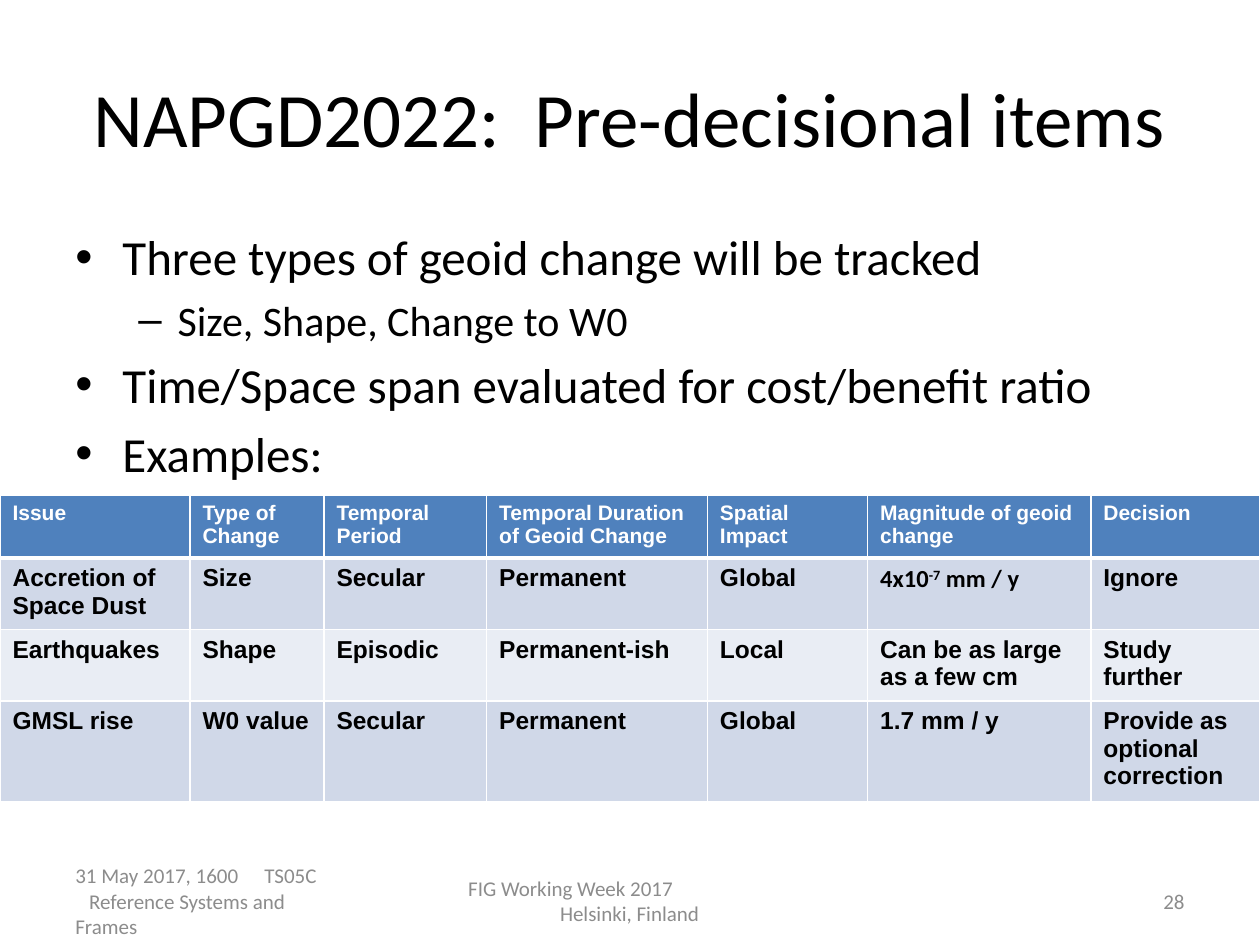
from dataclasses import dataclass
from typing import Optional

from lxml.etree import SubElement
from pptx import Presentation
from pptx.dml.color import RGBColor
from pptx.enum.text import MSO_ANCHOR, PP_ALIGN
from pptx.oxml.ns import qn
from pptx.util import Cm, Pt

BLACK = RGBColor(0x00, 0x00, 0x00)
WHITE = RGBColor(0xFF, 0xFF, 0xFF)
GREY = RGBColor(0x8C, 0x8C, 0x8C)
HEADER_BLUE = RGBColor(0x4F, 0x81, 0xBD)
BAND_DARK = RGBColor(0xD0, 0xD8, 0xE8)
BAND_LIGHT = RGBColor(0xE9, 0xED, 0xF4)


@dataclass(frozen=True)
class Span:
    text: str
    size: float
    color: RGBColor = BLACK
    font: str = "Calibri"
    bold: Optional[bool] = None
    baseline: int = 0


@dataclass(frozen=True)
class Line:
    span: Span
    align: PP_ALIGN = PP_ALIGN.LEFT
    level: int = 0
    margin: float = 0
    indent: float = 0
    bullet: str = ""
    tab: float = 0
    before: float = 0


@dataclass(frozen=True)
class TextBlock:
    left: float
    top: float
    width: float
    height: float
    lines: tuple[Line, ...]
    anchor: MSO_ANCHOR = MSO_ANCHOR.MIDDLE
    right_inset: float = 0.25


def add_span(paragraph, span: Span) -> None:
    run = paragraph.add_run()
    run.text = span.text
    run.font.name = span.font
    run.font.size = Pt(span.size)
    run.font.bold = span.bold
    run.font.color.rgb = span.color
    if span.baseline:
        run.font._element.set("baseline", str(span.baseline * 1000))


def add_line(paragraph, line: Line) -> None:
    properties = paragraph._p.get_or_add_pPr()
    properties.set("marL", str(Cm(line.margin)))
    properties.set("indent", str(Cm(line.indent)))
    if line.bullet:
        SubElement(properties, qn("a:buFont"), typeface="Arial")
        SubElement(properties, qn("a:buChar"), char=line.bullet)
    if line.tab:
        stops = SubElement(properties, qn("a:tabLst"))
        SubElement(stops, qn("a:tab"), pos=str(Cm(line.tab)), algn="l")
    paragraph.level = line.level
    paragraph.alignment = line.align
    paragraph.space_before = Pt(line.before)
    add_span(paragraph, line.span)


def add_text(slide, block: TextBlock) -> None:
    box = slide.shapes.add_textbox(
        Cm(block.left), Cm(block.top), Cm(block.width), Cm(block.height)
    )
    frame = box.text_frame
    frame.word_wrap = True
    frame.vertical_anchor = block.anchor
    frame.margin_right = Cm(block.right_inset)
    for index, line in enumerate(block.lines):
        paragraph = frame.add_paragraph() if index else frame.paragraphs[0]
        add_line(paragraph, line)


def set_border(cell, side: str, width: float) -> None:
    border = SubElement(
        cell._tc.get_or_add_tcPr(), qn(f"a:{side}"), w=str(Pt(width))
    )
    fill = SubElement(border, qn("a:solidFill"))
    SubElement(fill, qn("a:srgbClr"), val=str(WHITE))


def fill_cell(cell, spans: tuple[Span, ...], fill: RGBColor,
              top: float, bottom: float) -> None:
    for side, width in (("lnL", 1), ("lnR", 1), ("lnT", top), ("lnB", bottom)):
        set_border(cell, side, width)
    cell.fill.solid()
    cell.fill.fore_color.rgb = fill
    for span in spans:
        add_span(cell.text_frame.paragraphs[0], span)


def heading(text: str) -> tuple[Span, ...]:
    return (Span(text, 12, WHITE, "Arial", True),)


def entry(text: str) -> tuple[Span, ...]:
    return (Span(text, 14, BLACK, "Arial", True),)


DUST_MAGNITUDE = (
    Span("4x10", 14, bold=True),
    Span("-7", 14, bold=True, baseline=30),
    Span(" mm / y", 14, bold=True),
)
HEADINGS = ("Issue", "Type of Change", "Temporal Period",
            "Temporal Duration of Geoid Change", "Spatial Impact",
            "Magnitude of geoid change", "Decision")
DUST = ("Accretion of Space Dust", "Size", "Secular", "Permanent", "Global")
QUAKES = ("Earthquakes", "Shape", "Episodic", "Permanent-ish", "Local",
          "Can be as large as a few cm", "Study further")
SEA_LEVEL = ("GMSL rise", "W0 value", "Secular", "Permanent", "Global",
             "1.7 mm / y", "Provide as optional correction")
ISSUE_ROWS = (
    tuple(map(heading, HEADINGS)),
    (*map(entry, DUST), DUST_MAGNITUDE, entry("Ignore")),
    tuple(map(entry, QUAKES)),
    tuple(map(entry, SEA_LEVEL)),
)
ROW_FILLS = (HEADER_BLUE, BAND_DARK, BAND_LIGHT, BAND_DARK)
COLUMN_WIDTHS = (3.83, 2.7, 3.28, 4.45, 3.23, 4.5, 3.41)
ROW_HEIGHTS = (1.17, 1.36, 1.36, 1.93)


def add_issue_table(slide) -> None:
    table = slide.shapes.add_table(
        len(ISSUE_ROWS), len(COLUMN_WIDTHS), Cm(0), Cm(9.98),
        Cm(sum(COLUMN_WIDTHS)), Cm(sum(ROW_HEIGHTS))
    ).table
    for column, width in zip(table.columns, COLUMN_WIDTHS):
        column.width = Cm(width)
    for index, (row, height) in enumerate(zip(table.rows, ROW_HEIGHTS)):
        row.height = Cm(height)
        top = 3 if index == 1 else 1
        bottom = 3 if index == 0 else 1
        for cell, spans in zip(row.cells, ISSUE_ROWS[index]):
            fill_cell(cell, spans, ROW_FILLS[index], top, bottom)


def point(text: str, before: float = 5.6) -> Line:
    return Line(Span(text, 28), margin=0.95, indent=-0.95, bullet="•", before=before)


def footnote(text: str, **layout) -> Line:
    return Line(Span(text, 12, GREY), **layout)


TITLE = TextBlock(1.27, 0.76, 22.86, 3.18, (
    Line(Span("NAPGD2022:  Pre-decisional items", 44), PP_ALIGN.CENTER),
))
BODY = TextBlock(1.27, 4.45, 22.86, 12.57, (
    point("Three types of geoid change will be tracked", 0),
    Line(Span("Size, Shape, Change to W0", 24), level=1, margin=2.06,
         indent=-0.79, bullet="–", before=4.8),
    point("Time/Space span evaluated for cost/benefit ratio"),
    point("Examples:"),
), MSO_ANCHOR.TOP)
SESSION = TextBlock(1.27, 17.65, 5.92, 1.02, (
    footnote("31 May 2017, 1600\tTS05C", tab=4.14),
    footnote("Reference Systems and Frames", indent=0.28),
), right_inset=0.35)
EVENT = TextBlock(8.69, 17.65, 8.05, 1.02, (
    footnote("FIG Working Week 2017", margin=0.5),
    footnote("Helsinki, Finland", margin=2.35),
))
PAGE_NUMBER = TextBlock(18.21, 17.65, 5.92, 1.02, (
    footnote("28", align=PP_ALIGN.RIGHT),
))


def main() -> None:
    presentation = Presentation()
    presentation.slide_width = Cm(25.4)
    presentation.slide_height = Cm(19.05)
    slide = presentation.slides.add_slide(presentation.slide_layouts[6])
    for block in (TITLE, BODY, SESSION, EVENT, PAGE_NUMBER):
        add_text(slide, block)
    add_issue_table(slide)
    presentation.save("out.pptx")


if __name__ == "__main__":
    main()
